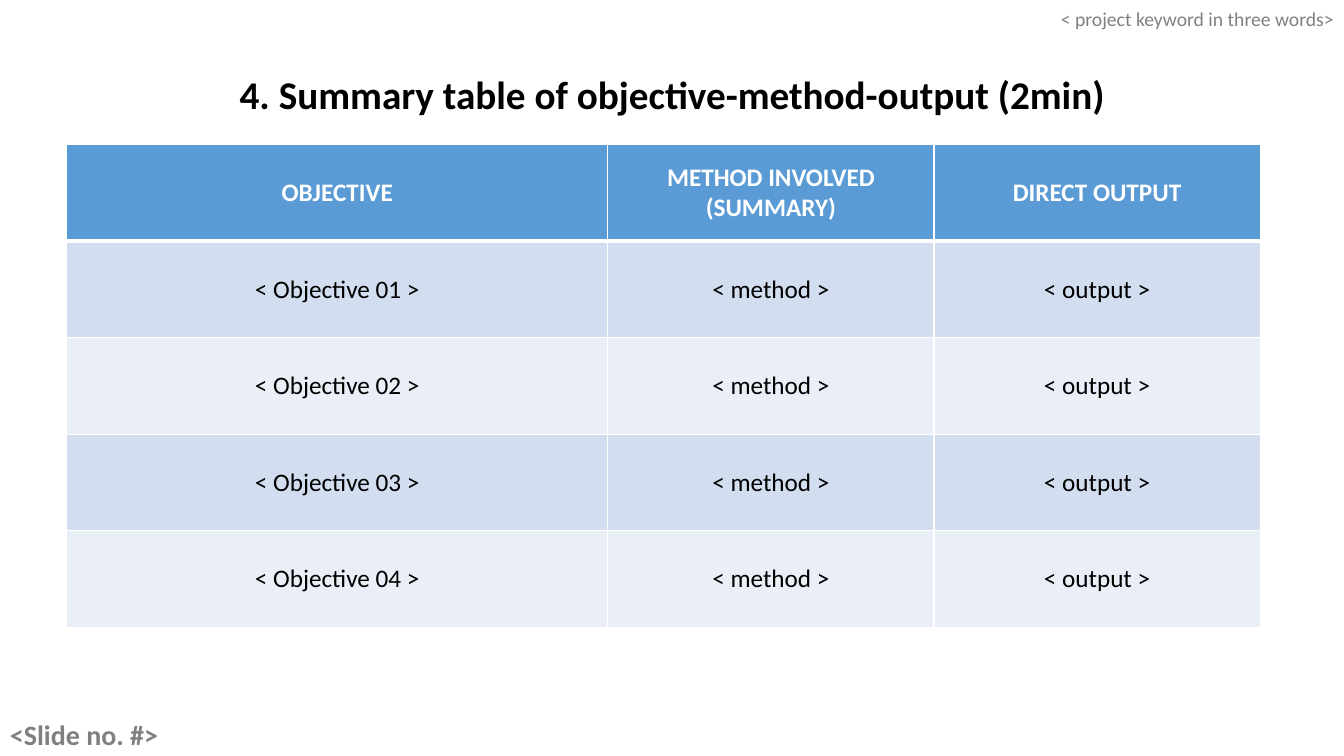
from lxml import etree
from pptx import Presentation
from pptx.dml.color import RGBColor
from pptx.enum.text import MSO_ANCHOR, MSO_AUTO_SIZE, PP_ALIGN
from pptx.oxml.ns import qn
from pptx.util import Pt

LEFT, CENTER, RIGHT = PP_ALIGN.LEFT, PP_ALIGN.CENTER, PP_ALIGN.RIGHT
MIDDLE = MSO_ANCHOR.MIDDLE
GROW = MSO_AUTO_SIZE.SHAPE_TO_FIT_TEXT

FONT = "Calibri"
BLACK, WHITE, GRAY = "000000", "FFFFFF", "808080"
HEADER_FILL = "5B9BD5"
BAND_FILLS = ["D2DEEF", "EAEFF7"]

# text, (left, top, width, height), format
CAPTIONS = [
    ("<Slide no. #>", (0, 507, 176.5, 33),
     dict(size=20, color=GRAY, bold=True, align=LEFT)),
    ("4. Summary table of objective-method-output (2min)", (0, 44, 960, 41.5),
     dict(size=28, color=BLACK, bold=True, align=CENTER)),
    ("< project keyword in three words>", (353.3, 0, 606.7, 25.2),
     dict(size=14, color=GRAY, align=RIGHT)),
]
HEADINGS = ["OBJECTIVE", "METHOD INVOLVED (SUMMARY)", "DIRECT OUTPUT"]
OBJECTIVES = ["01", "02", "03", "04"]
ROWS = [HEADINGS] + [
    [f"< Objective {number} >", "< method >", "< output >"] for number in OBJECTIVES
]
TABLE_LEFT, TABLE_TOP = 47.6, 103.2
COLUMN_WIDTHS = [386.6, 233, 233]
ROW_HEIGHT = 69
RULE, HEADER_RULE = 1, 3


def rgb(color):
    return RGBColor.from_string(color)


def write(frame, text, size=18, color=BLACK, bold=False, align=CENTER,
          line_spacing=None, space_after=None):
    paragraph = frame.paragraphs[0]
    paragraph.alignment = align
    paragraph.line_spacing = line_spacing
    paragraph.space_after = space_after
    run = paragraph.add_run()
    run.text = text
    run.font.name = FONT
    run.font.size = Pt(size)
    run.font.bold = bold
    run.font.color.rgb = rgb(color)


def add_caption(slide, text, box, **style):
    frame = slide.shapes.add_textbox(*map(Pt, box)).text_frame
    frame.word_wrap = True
    frame.auto_size = GROW
    write(frame, text, line_spacing=1.07, space_after=Pt(8), **style)


def set_borders(cell, **widths):
    """Draw white cell borders, given by side (L, R, T, B) in points."""
    properties = cell._tc.get_or_add_tcPr()
    for position, side in enumerate("LRTB"):
        line = etree.Element(qn(f"a:ln{side}"), w=str(Pt(widths.get(side, RULE))))
        fill = etree.SubElement(line, qn("a:solidFill"))
        etree.SubElement(fill, qn("a:srgbClr"), val=WHITE)
        properties.insert(position, line)


def add_summary(slide):
    table = slide.shapes.add_table(
        len(ROWS), len(HEADINGS), Pt(TABLE_LEFT), Pt(TABLE_TOP),
        Pt(sum(COLUMN_WIDTHS)), Pt(ROW_HEIGHT * len(ROWS))).table
    for column, width in zip(table.columns, COLUMN_WIDTHS):
        column.width = Pt(width)
    for r, texts in enumerate(ROWS):
        table.rows[r].height = Pt(ROW_HEIGHT)
        header = r == 0
        for c, text in enumerate(texts):
            cell = table.cell(r, c)
            cell.vertical_anchor = MIDDLE
            cell.fill.solid()
            cell.fill.fore_color.rgb = rgb(
                HEADER_FILL if header else BAND_FILLS[(r - 1) % 2])
            set_borders(cell, T=HEADER_RULE if r == 1 else RULE,
                        B=HEADER_RULE if header else RULE)
            write(cell.text_frame, text, bold=header,
                  color=WHITE if header else BLACK)


def main():
    deck = Presentation()
    deck.slide_width, deck.slide_height = Pt(960), Pt(540)
    slide = deck.slides.add_slide(deck.slide_layouts[6])
    add_summary(slide)
    for text, box, style in CAPTIONS:
        add_caption(slide, text, box, **style)
    deck.save("out.pptx")


if __name__ == "__main__":
    main()
